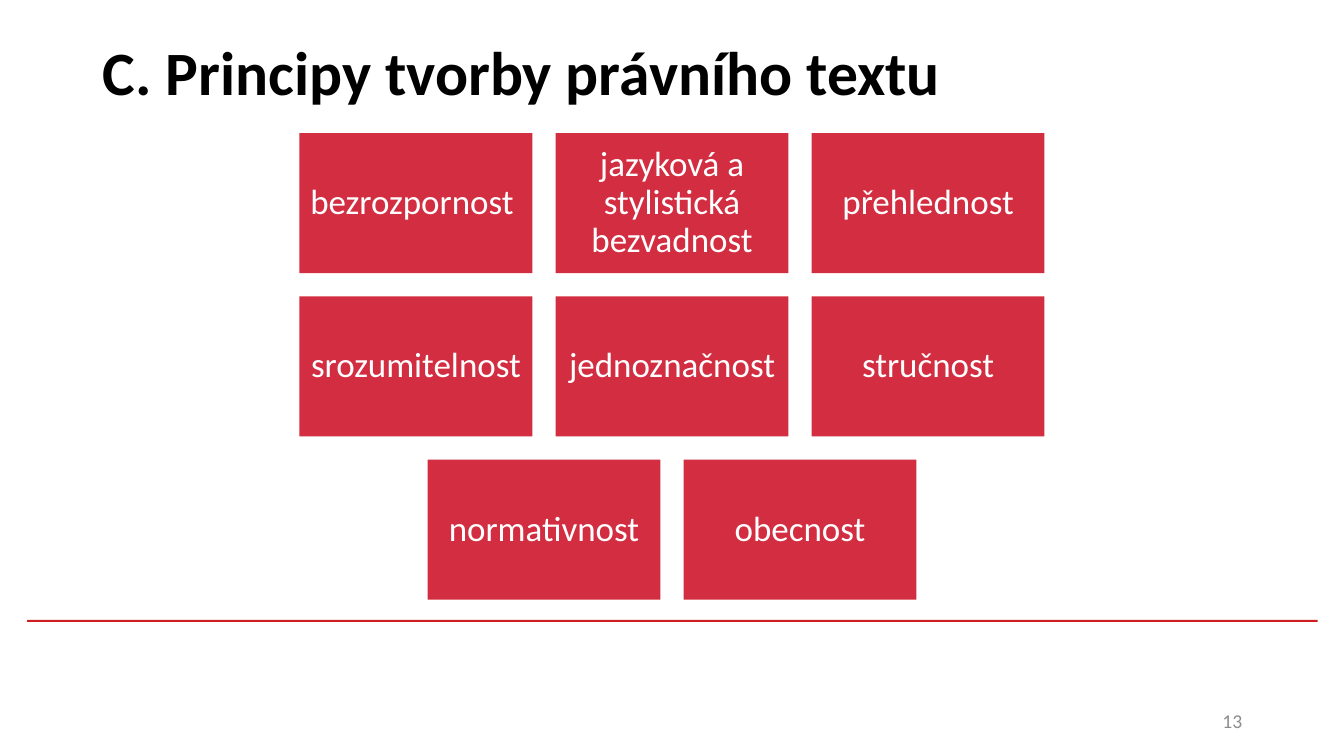
from dataclasses import dataclass

from pptx import Presentation
from pptx import util as u
from pptx.dml.color import RGBColor
from pptx.enum import shapes, text

BLACK = RGBColor(0x00, 0x00, 0x00)
WHITE = RGBColor(0xFF, 0xFF, 0xFF)
GREY = RGBColor(0x8C, 0x8C, 0x8C)
TILE_RED = RGBColor(0xD2, 0x2D, 0x40)
RULE_RED = RGBColor(0xCD, 0x1F, 0x21)

SLIDE_WIDTH, SLIDE_HEIGHT = 13.33, 7.5
TILE_WIDTH, TILE_HEIGHT, TILE_GAP = 2.31, 1.39, 0.23
TILES_TOP = 1.32

PRINCIPLE_ROWS = (
    ("bezrozpornost ", "jazyková a stylistická bezvadnost", "přehlednost"),
    ("srozumitelnost", "jednoznačnost", "stručnost"),
    ("normativnost", "obecnost"),
)


@dataclass(frozen=True)
class Box:
    left: float
    top: float
    width: float
    height: float

    def lengths(self) -> tuple:
        return tuple(u.Inches(v) for v in (self.left, self.top, self.width, self.height))


@dataclass(frozen=True)
class TextStyle:
    size: int
    color: RGBColor
    align: text.PP_ALIGN
    bold: bool = False
    line_spacing: float = 1.0


TITLE_STYLE = TextStyle(44, BLACK, text.PP_ALIGN.LEFT, bold=True, line_spacing=0.9)
TILE_STYLE = TextStyle(25, WHITE, text.PP_ALIGN.CENTER, line_spacing=0.9)
NUMBER_STYLE = TextStyle(14, GREY, text.PP_ALIGN.RIGHT)


def write(shape, wording: str, style: TextStyle) -> None:
    frame = shape.text_frame
    frame.text = wording
    paragraph = frame.paragraphs[0]
    frame_format = {
        "word_wrap": True,
        "auto_size": text.MSO_AUTO_SIZE.NONE,
        "vertical_anchor": text.MSO_ANCHOR.MIDDLE,
    }
    paragraph_format = {"alignment": style.align, "line_spacing": style.line_spacing}
    font_format = {"name": "Calibri", "size": u.Pt(style.size), "bold": style.bold}
    for target, values in (
        (frame, frame_format),
        (paragraph, paragraph_format),
        (paragraph.runs[0].font, font_format),
    ):
        for attribute, value in values.items():
            setattr(target, attribute, value)
    paragraph.runs[0].font.color.rgb = style.color


def add_rectangle(slide, box: Box, color: RGBColor):
    rectangle = slide.shapes.add_shape(shapes.MSO_SHAPE.RECTANGLE, *box.lengths())
    rectangle.shadow.inherit = False
    rectangle.fill.solid()
    rectangle.fill.fore_color.rgb = color
    rectangle.line.fill.background()
    return rectangle


def add_title(slide, wording: str, box: Box) -> None:
    title = slide.shapes.title
    title.left, title.top, title.width, title.height = box.lengths()
    write(title, wording, TITLE_STYLE)


def add_principles(slide) -> None:
    """Lay out the tiles in rows, each row centred on the slide."""
    for row, principles in enumerate(PRINCIPLE_ROWS):
        row_width = len(principles) * (TILE_WIDTH + TILE_GAP) - TILE_GAP
        left = (SLIDE_WIDTH - row_width) / 2
        top = TILES_TOP + row * (TILE_HEIGHT + TILE_GAP)
        for column, principle in enumerate(principles):
            box = Box(left + column * (TILE_WIDTH + TILE_GAP), top, TILE_WIDTH, TILE_HEIGHT)
            tile = add_rectangle(slide, box, TILE_RED)
            for side in ("left", "top", "right", "bottom"):
                setattr(tile.text_frame, f"margin_{side}", u.Inches(0.1))
            write(tile, principle, TILE_STYLE)


def main() -> None:
    presentation = Presentation()
    presentation.slide_width = u.Inches(SLIDE_WIDTH)
    presentation.slide_height = u.Inches(SLIDE_HEIGHT)
    slide = presentation.slides.add_slide(presentation.slide_layouts.get_by_name("Title Only"))

    add_rectangle(slide, Box(0.27, 6.15, 12.8, 0.02), RULE_RED)
    add_title(slide, "C. Principy tvorby právního textu", Box(0.92, 0.02, 11.5, 1.45))
    add_principles(slide)
    page_number = slide.shapes.add_textbox(*Box(9.42, 6.95, 3, 0.4).lengths())
    write(page_number, "13", NUMBER_STYLE)

    presentation.save("out.pptx")


if __name__ == "__main__":
    main()
